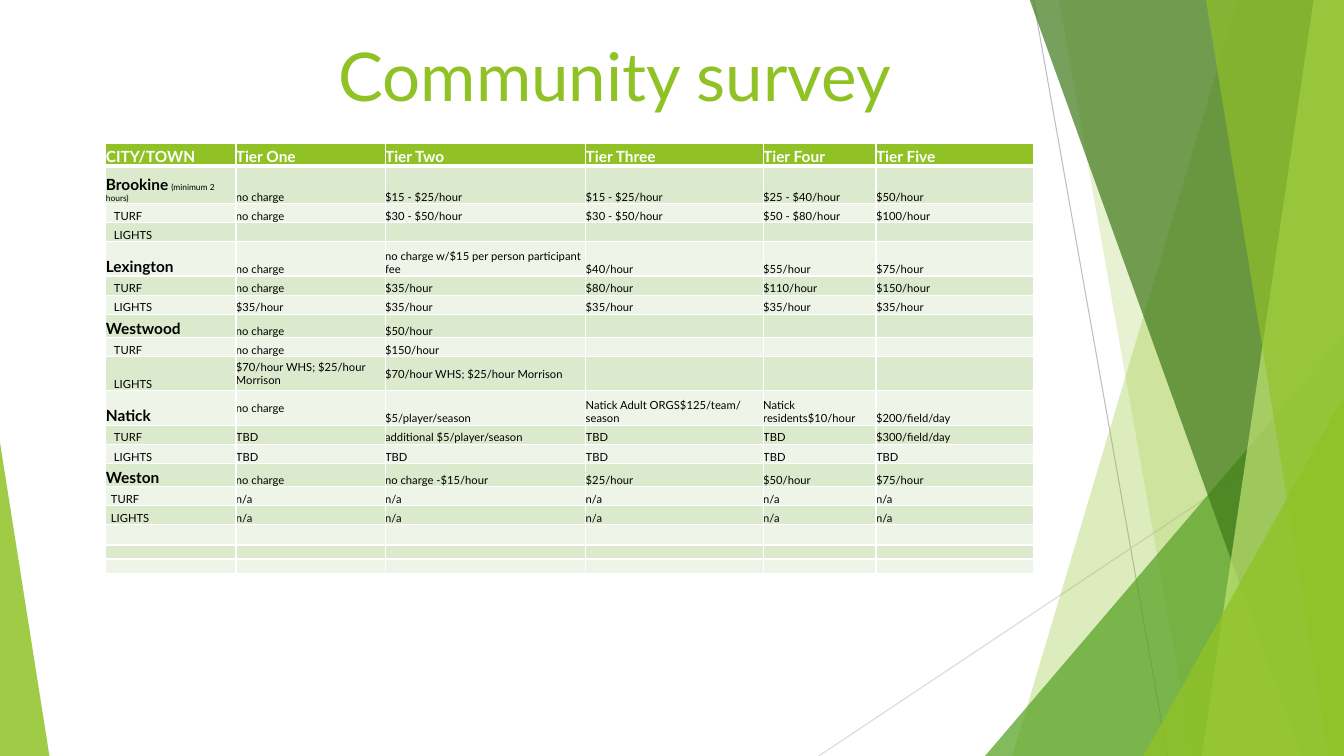
import pptx
import pptx.dml.color
import pptx.enum.shapes
import pptx.enum.text
import pptx.oxml
import pptx.oxml.ns
import pptx.util
from lxml import etree
from pptx.util import Inches

GREEN, WHITE, BLACK = "90C226", "FFFFFF", "000000"
BANDS = ("DBE9CD", "EEF4E8")
TOP, BOTTOM, RIGHT = -0.01, 7.5, 13.33


def rgb(value):
    return pptx.dml.color.RGBColor.from_string(value)


def add_xml(parent, tag, **attributes):
    return etree.SubElement(parent, pptx.oxml.ns.qn(tag), attributes)


class SurveySlide:
    font_name = "Lato"

    def __init__(self, deck):
        self.slide = deck.slides.add_slide(deck.slide_layouts[5])
        self.shapes = self.slide.shapes

    def apply(self, target, values):
        for name, value in values.items():
            setattr(target, name, value)

    def add_text(self, paragraph, text, size, color, bold=False):
        run = paragraph.add_run()
        run.text = text
        self.apply(run.font, {"name": self.font_name, "size": pptx.util.Pt(size), "bold": bold})
        run.font.color.rgb = rgb(color)

    def title(self, text, left, top, width, height):
        heading = self.shapes.title
        self.apply(heading, {"left": Inches(left), "top": Inches(top),
                             "width": Inches(width), "height": Inches(height)})
        self.apply(heading.text_frame, {"vertical_anchor": pptx.enum.text.MSO_ANCHOR.BOTTOM,
                                        "auto_size": pptx.enum.text.MSO_AUTO_SIZE.NONE,
                                        "word_wrap": True})
        paragraph = heading.text_frame.paragraphs[0]
        paragraph.alignment = pptx.enum.text.PP_ALIGN.CENTER
        self.add_text(paragraph, text, 48, GREEN)

    def line(self, start, end, color):
        ray = self.shapes.add_connector(pptx.enum.shapes.MSO_CONNECTOR.STRAIGHT,
                                        *(Inches(n) for n in start + end))
        ray.line.color.rgb = rgb(color)
        ray.line.width = pptx.util.Pt(0.75)
        add_xml(ray._element.spPr, "a:effectLst")

    def paint(self, facet, color, opacity):
        facet.shadow.inherit = False
        facet.fill.solid()
        facet.fill.fore_color.rgb = rgb(color)
        facet.line.fill.background()
        tint = facet._element.spPr.find(".//" + pptx.oxml.ns.qn("a:srgbClr"))
        add_xml(tint, "a:alpha", val=str(opacity * 1000))

    def facet(self, top_x, bottom_x, color, opacity):
        """Panel running from a slanted left edge to the slide's right edge."""
        corners = [(Inches(x), Inches(y)) for x, y in
                   ((top_x, TOP), (RIGHT, TOP), (RIGHT, BOTTOM), (bottom_x, BOTTOM))]
        outline = self.shapes.build_freeform(*corners[0], scale=1.0)
        outline.add_line_segments(corners[1:], close=True)
        self.paint(outline.convert_to_shape(), color, opacity)

    def triangle(self, left, top, width, apex, color, opacity):
        corner = self.shapes.add_shape(
            pptx.enum.shapes.MSO_SHAPE.ISOSCELES_TRIANGLE,
            Inches(left), Inches(top), Inches(width), Inches(BOTTOM - top))
        corner.adjustments[0] = apex
        self.paint(corner, color, opacity)

    def border(self, cell, **widths):
        properties = cell._tc.get_or_add_tcPr()
        for position, side in enumerate(("L", "R", "T", "B")):
            edge = pptx.oxml.parse_xml(
                f'<a:ln{side} {pptx.oxml.ns.nsdecls("a")} w="{widths.get(side, 1) * 12700}">'
                f'<a:solidFill><a:srgbClr val="{WHITE}"/></a:solidFill></a:ln{side}>')
            properties.insert(position, edge)

    def cell(self, cell, spans, fill, anchor, indent=0, **edges):
        self.apply(cell, {"margin_left": 0, "margin_right": 0, "margin_top": 0,
                          "margin_bottom": 0, "vertical_anchor": anchor})
        cell.fill.solid()
        cell.fill.fore_color.rgb = rgb(fill)
        self.border(cell, **edges)
        paragraph = cell.text_frame.paragraphs[0]
        if indent:
            paragraph._p.get_or_add_pPr().set("marL", str(Inches(indent)))
        for span in spans:
            self.add_text(paragraph, *span)
        if not spans:
            add_xml(paragraph._p, "a:endParaRPr", sz="800")

    def table(self, left, top, widths, heights):
        grid = self.shapes.add_table(len(heights), len(widths), Inches(left), Inches(top),
                                     Inches(sum(widths)), Inches(sum(heights))).table
        for column, width in zip(grid.columns, widths):
            column.width = Inches(width)
        for row, height in zip(grid.rows, heights):
            row.height = Inches(height)
        return grid


TIERS = ("CITY/TOWN", "Tier One", "Tier Two", "Tier Three", "Tier Four", "Tier Five")
FREE, LAMPS = "no charge", "$70/hour WHS; $25/hour Morrison"
# Each town: name, indent of its sub-rows, then fees for the field, turf and lights
TOWNS = (
    ("Brookine", 0.08, (
        (FREE, "$15 - $25/hour", "$15 - $25/hour", "$25 - $40/hour", "$50/hour"),
        (FREE, "$30 - $50/hour", "$30 - $50/hour", "$50 - $80/hour", "$100/hour"),
        ("",) * 5)),
    ("Lexington", 0.08, (
        (FREE, "no charge w/$15 per person participant fee", "$40/hour", "$55/hour", "$75/hour"),
        (FREE, "$35/hour", "$80/hour", "$110/hour", "$150/hour"),
        ("$35/hour",) * 5)),
    ("Westwood", 0.08, (
        (FREE, "$50/hour", "", "", ""),
        (FREE, "$150/hour", "", "", ""),
        (LAMPS, LAMPS, "", "", ""))),
    ("Natick", 0.08, (
        (FREE, "$5/player/season", "Natick Adult ORGS$125/team/ season",
         "Natick residents$10/hour", "$200/field/day"),
        ("TBD", "additional $5/player/season", "TBD", "TBD", "$300/field/day"),
        ("TBD",) * 5)),
    ("Weston", 0.05, (
        (FREE, "no charge -$15/hour", "$25/hour", "$50/hour", "$75/hour"),
        ("n/a",) * 5,
        ("n/a",) * 5)),
)
COLUMN_WIDTHS = (1.29, 1.48, 1.99, 1.76, 1.12, 1.56)
ROW_HEIGHTS = (0.23, 0.37, 0.19, 0.19, 0.34, 0.19, 0.19, 0.23, 0.19, 0.34,
               0.34, 0.19, 0.19, 0.23, 0.19, 0.19, 0.2, 0.14, 0.14)
CENTERED = {(9, 1), (9, 2), (10, 1)}


def survey_rows():
    """Yield the label spans, label indent and fees of every row below the header."""
    for town, indent, (field, turf, lights) in TOWNS:
        label = [(town, 11, BLACK, True)]
        if town == "Brookine":
            label += [(" ", 8, BLACK), ("(minimum 2 hours)", 6, BLACK)]
        yield label, 0, field
        yield [("TURF", 8, BLACK)], indent, turf
        yield [("LIGHTS", 8, BLACK)], indent, lights
    for _ in range(3):
        yield [], 0, ("",) * 5


def main():
    deck = pptx.Presentation()
    deck.slide_width, deck.slide_height = Inches(RIGHT), Inches(BOTTOM)
    survey = SurveySlide(deck)

    # Faceted backdrop
    survey.line((10.25, 0), (11.58, BOTTOM), "BFBFBF")
    survey.line((RIGHT, 4.03), (8.12, BOTTOM), "D9D9D9")
    survey.facet(12.28, 10.04, GREEN, 30)
    survey.facet(10.5, 11.83, GREEN, 20)
    survey.triangle(9.77, 3.33, 3.56, 1, "54A021", 72)
    survey.facet(10.21, 12.91, "3F7819", 70)
    survey.facet(13.03, 11.92, "C0E474", 70)
    survey.facet(11.96, 13.18, GREEN, 65)
    survey.triangle(11.34, 3.93, 1.99, 1, GREEN, 80)
    survey.triangle(0, 4.39, 0.49, 0, GREEN, 85)

    # Heading
    survey.title("Community survey ", 1.98, 0, 8.39, 1.19)

    # Fee table
    bottom, middle = pptx.enum.text.MSO_ANCHOR.BOTTOM, pptx.enum.text.MSO_ANCHOR.MIDDLE
    fees_table = survey.table(1.05, 1.42, COLUMN_WIDTHS, ROW_HEIGHTS)
    for column, tier in enumerate(TIERS):
        survey.cell(fees_table.cell(0, column), [(tier, 11, WHITE, True)], GREEN, bottom, B=3)
    for row, (label, indent, fees) in enumerate(survey_rows(), 1):
        band = BANDS[(row - 1) % 2]
        top_edge = 3 if row == 1 else 1
        survey.cell(fees_table.cell(row, 0), label, band, bottom, indent, T=top_edge)
        for column, fee in enumerate(fees, 1):
            anchor = middle if (row, column) in CENTERED else bottom
            spans = [(fee, 8, BLACK)] if fee else []
            survey.cell(fees_table.cell(row, column), spans, band, anchor, T=top_edge)

    deck.save("out.pptx")


if __name__ == "__main__":
    main()
